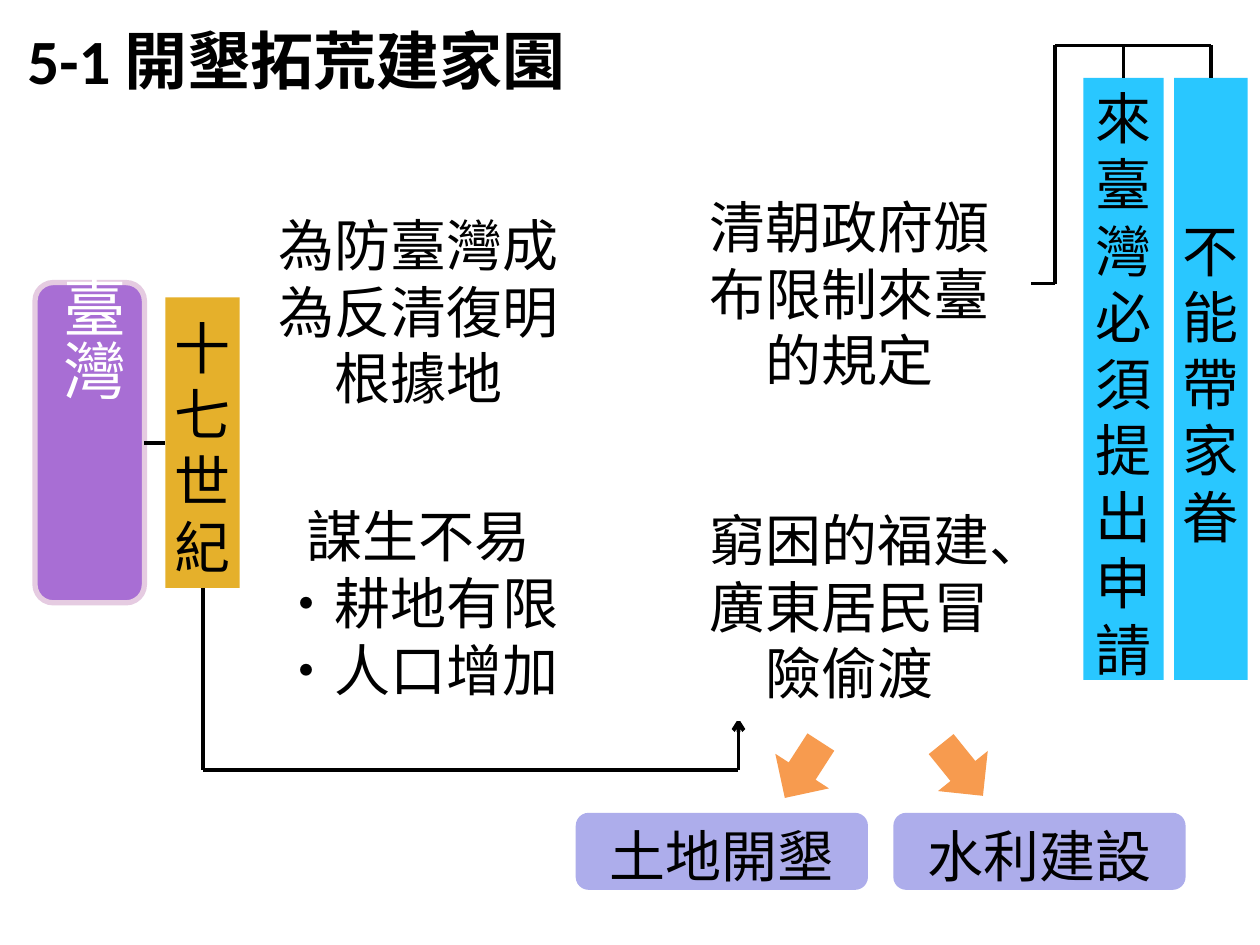
from dataclasses import dataclass

from pptx import Presentation
from pptx.dml.color import RGBColor
from pptx.enum import shapes, text
from pptx.oxml import ns, xmlchemy
from pptx.util import Pt

SHAPE = shapes.MSO_SHAPE
ALIGN = text.PP_ALIGN
ANCHOR = text.MSO_ANCHOR
CJK = "Noto Sans CJK SC"
BLACK, WHITE = "000000", "FFFFFF"
CYAN, LILAC, ORANGE, GOLD = "29C7FF", "ADADEB", "F79B4F", "E5B02B"


@dataclass(frozen=True)
class Box:
    left: float
    top: float
    width: float
    height: float
    fill: str
    words: tuple = ()
    kind: int = SHAPE.RECTANGLE
    adjust: tuple = ()
    side_inset: float = 0
    rotation: float = 0

    @property
    def center_x(self) -> float:
        return self.left + self.width / 2

    @property
    def center_y(self) -> float:
        return self.top + self.height / 2

    @property
    def bottom(self) -> float:
        return self.top + self.height


def color(value: str) -> RGBColor:
    return RGBColor.from_string(value)


def add_text(paragraph, words: str, *, size=32, font=CJK, ink=BLACK, bold=False,
             align=ALIGN.CENTER, spacing=None) -> None:
    paragraph.alignment = align
    if spacing:
        paragraph.line_spacing = Pt(spacing)
    run = paragraph.add_run()
    run.text = words
    run.font.size = Pt(size)
    run.font.name = font
    run.font.bold = bold
    run.font.color.rgb = color(ink)
    east_asian = xmlchemy.OxmlElement("a:ea")
    east_asian.set("typeface", font)
    run._r.find(".//" + ns.qn("a:latin")).addnext(east_asian)


def set_frame(frame, side=0, top=0, anchor=ANCHOR.MIDDLE, wrap=True) -> None:
    frame.word_wrap = wrap
    frame.auto_size = text.MSO_AUTO_SIZE.NONE
    frame.vertical_anchor = anchor
    frame.margin_left = frame.margin_right = Pt(side)
    frame.margin_top, frame.margin_bottom = Pt(top), Pt(0)


def draw_box(slide, box: Box):
    shape = slide.shapes.add_shape(
        box.kind, Pt(box.left), Pt(box.top), Pt(box.width), Pt(box.height))
    shape.shadow.inherit = False
    shape.fill.solid()
    shape.fill.fore_color.rgb = color(box.fill)
    shape.line.fill.background()
    shape.rotation = box.rotation
    for index, value in enumerate(box.adjust):
        shape.adjustments[index] = value
    frame = shape.text_frame
    set_frame(frame, box.side_inset, 5)
    for index, words in enumerate(box.words):
        paragraph = frame.add_paragraph() if index else frame.paragraphs[0]
        add_text(paragraph, words, spacing=38)
    return shape


def draw_line(slide, start: tuple, end: tuple, begin_at=None, end_at=None, arrow=False) -> None:
    line = slide.shapes.add_connector(
        shapes.MSO_CONNECTOR.STRAIGHT, *(Pt(value) for value in start + end))
    if begin_at:
        line.begin_connect(*begin_at)
    if end_at:
        line.end_connect(*end_at)
    line.line.color.rgb = color(BLACK)
    line.line.width = Pt(2.25)
    if arrow:
        head = xmlchemy.OxmlElement("a:tailEnd")
        head.set("type", "arrow")
        line.element.find(".//" + ns.qn("a:ln")).append(head)
    line.element.spPr.append(xmlchemy.OxmlElement("a:effectLst"))


def draw_title(slide) -> None:
    title = slide.shapes.title
    title.left, title.top, title.width, title.height = Pt(8.5), Pt(8.5), Pt(335), Pt(51)
    set_frame(title.text_frame, 7.2, wrap=False)
    heading = title.text_frame.paragraphs[0]
    for words, font in (("5-1 ", "Calibri"), ("開墾拓荒建家園", "Arial")):
        add_text(heading, words, size=36, font=font, bold=True, align=ALIGN.LEFT)


def draw_taiwan_label(slide) -> None:
    label = slide.shapes.add_textbox(Pt(19.5), Pt(151), Pt(58.5), Pt(206.5))
    set_frame(label.text_frame, 3.6, 7, ANCHOR.TOP)
    label.element.find(".//" + ns.qn("a:bodyPr")).set("vert", "eaVert")
    add_text(label.text_frame.paragraphs[0], "臺灣", size=36, ink=WHITE, align=ALIGN.LEFT)


def main() -> None:
    deck = Presentation()
    deck.slide_width, deck.slide_height = Pt(720), Pt(540)
    slide = deck.slides.add_slide(deck.slide_layouts[5])
    draw_title(slide)

    taiwan = Box(20, 161.5, 62.5, 183, "A86ED4", kind=SHAPE.ROUNDED_RECTANGLE)
    century = Box(94.5, 170, 42.5, 166, GOLD, ("十七世紀",))
    permit = Box(619, 44.5, 46, 344, CYAN, ("來臺灣必須提出申請",))
    family = Box(671, 44.5, 42, 344, CYAN, ("不能帶家眷",))
    taiwan_shape, century_shape, permit_shape, family_shape = (
        draw_box(slide, box) for box in (taiwan, century, permit, family))
    taiwan_shape.line.color.rgb = color("E5CBE1")
    taiwan_shape.line.width = Pt(3)
    draw_taiwan_label(slide)

    draw_line(slide, (taiwan.left + taiwan.width, taiwan.center_y),
              (century.left, century.center_y), (taiwan_shape, 3), (century_shape, 1))

    rail_y, rail_x, rules_y = 26, 603, 162
    for box, shape in ((permit, permit_shape), (family, family_shape)):
        draw_line(slide, (box.center_x, box.top), (box.center_x, rail_y), (shape, 0))
    draw_line(slide, (family.center_x, rail_y), (rail_x, rail_y))
    draw_line(slide, (rail_x, rail_y), (rail_x, rules_y))
    draw_line(slide, (rail_x, rules_y), (580, rules_y))

    base_y, crossing_x = 440, 422
    draw_line(slide, (century.center_x, century.bottom), (century.center_x, base_y),
              (century_shape, 2))
    draw_line(slide, (century.center_x, base_y), (crossing_x, base_y))
    draw_line(slide, (crossing_x, base_y), (crossing_x, 410.5), arrow=True)

    causes = (
        (116.5, ("為防臺灣成為反清復明根據地",)),
        (283, ("謀生不易", "‧耕地有限", "‧人口增加")),
    )
    draw_box(slide, Box(382.5, 111.5, 206.5, 165, WHITE, ("清朝政府頒布限制來臺的規定",),
                        SHAPE.DOWN_ARROW_CALLOUT, (0.24, 0.25, 0.25, 0.65), 10))
    for top, words in causes:
        draw_box(slide, Box(144, top, 238.5, 117.5, WHITE, words,
                            SHAPE.RIGHT_ARROW_CALLOUT, (0.28, 0.24, 0.35, 0.8), 10))
    draw_box(slide, Box(382.5, 276, 206.5, 136, WHITE, ("窮困的福建、廣東居民冒險偷渡",),
                        side_inset=10))

    results = (("土地開墾", 329, 440.5, 212.8), ("水利建設", 510.5, 531.5, 141.1))
    for words, left, arrow_left, turn in results:
        draw_box(slide, Box(left, 464.5, 167, 44, LILAC, (words,), SHAPE.ROUNDED_RECTANGLE))
        draw_box(slide, Box(arrow_left, 421, 36.5, 38, ORANGE,
                            kind=SHAPE.UP_ARROW, rotation=turn))

    deck.save("out.pptx")


if __name__ == "__main__":
    main()
